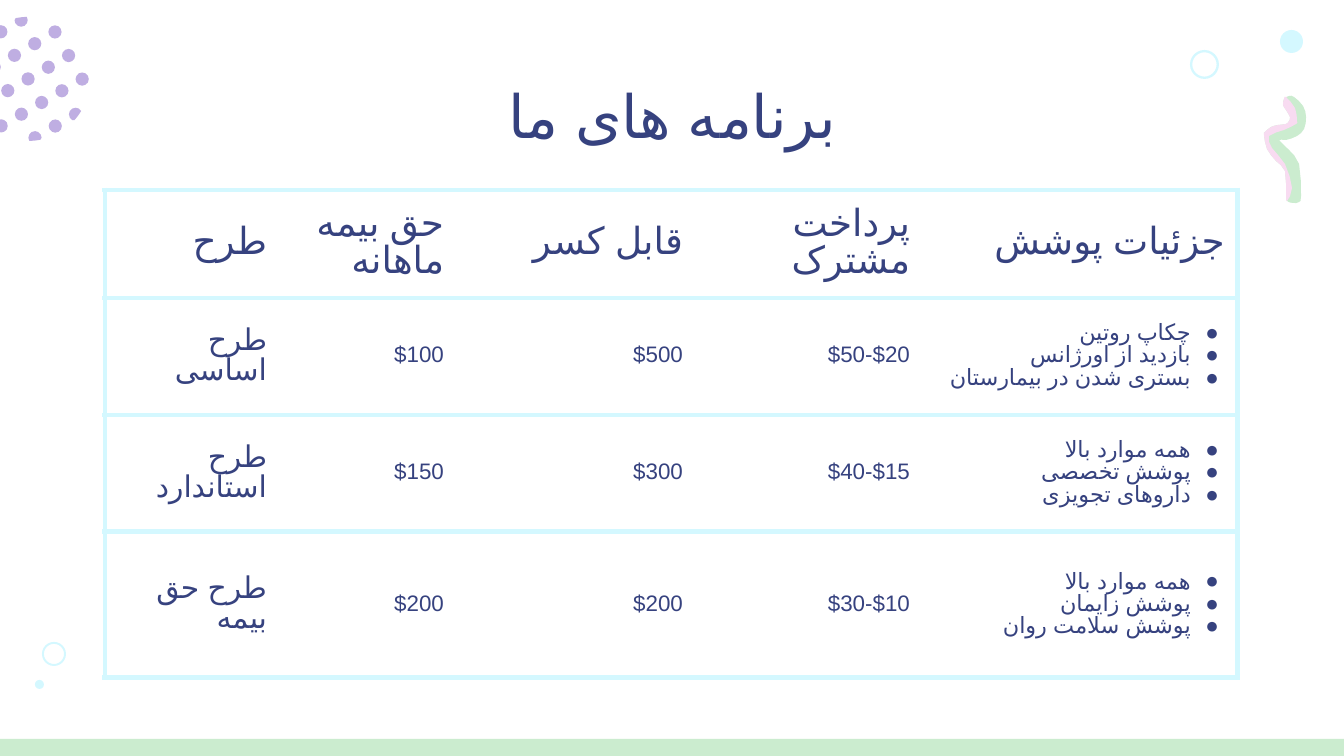
import math

from pptx import Presentation
from pptx.dml.color import RGBColor
from pptx.enum.lang import MSO_LANGUAGE_ID
from pptx.enum.shapes import MSO_SHAPE
from pptx.enum.text import MSO_ANCHOR, MSO_AUTO_SIZE, PP_ALIGN
from pptx.oxml.ns import qn
from pptx.oxml.xmlchemy import OxmlElement
from pptx.util import Emu, Pt

RECTANGLE, ELLIPSE, RING = MSO_SHAPE.RECTANGLE, MSO_SHAPE.OVAL, MSO_SHAPE.DONUT
TOP, MIDDLE = MSO_ANCHOR.TOP, MSO_ANCHOR.MIDDLE
CENTER, RIGHT = PP_ALIGN.CENTER, PP_ALIGN.RIGHT
FIXED = MSO_AUTO_SIZE.NONE
PERSIAN = MSO_LANGUAGE_ID.FARSI

SCALE = 914400 / 134.4
NAVY, AQUA, GREEN, PINK, LILAC = "36427F", "D4F8FF", "CBECCF", "F8DBF1", "BFAEE2"
INSET = 13

HEADERS = ["طرح", "حق بیمه ماهانه", "قابل کسر", "پرداخت مشترک", "جزئیات پوشش"]
PLANS = [
    ["طرح اساسی", "$100", "$500", "$20-$50",
     "چکاپ روتین\nبازدید از اورژانس\nبستری شدن در بیمارستان"],
    ["طرح استاندارد", "$150", "$300", "$15-$40",
     "همه موارد بالا\nپوشش تخصصی\nداروهای تجویزی"],
    ["طرح حق بیمه", "$200", "$200", "$10-$30",
     "همه موارد بالا\nپوشش زایمان\nپوشش سلامت روان"],
]
COLUMN_WIDTHS = [175, 177, 239, 227, 315]
ROW_HEIGHTS = [108, 117, 117, 146]

RIBBON_LEFT_EDGE = [
    (1284, 99), (1283, 105), (1286, 110), (1290, 117), (1289, 121), (1286, 124),
    (1278, 125), (1271, 127), (1265, 132), (1264, 135), (1267, 149), (1276, 161),
    (1285, 171), (1286, 195), (1287, 201)]
RIBBON_RIGHT_EDGE = [
    (1293, 203), (1299, 202), (1301, 196), (1299, 164), (1288, 149), (1279, 140),
    (1286, 140), (1297, 136), (1304, 129), (1306, 117), (1303, 106), (1294, 97),
    (1289, 96)]
RIBBON_SHADE_EDGE = [
    (1292, 188), (1285, 164), (1272, 148), (1269, 136), (1284, 130), (1296, 124),
    (1297, 121), (1295, 108), (1286, 97)]


def px(length):
    return Emu(round(length * SCALE))


def colour(hex_string):
    return RGBColor.from_string(hex_string)


def paint(shape, fill):
    shape.shadow.inherit = False
    shape.fill.solid()
    shape.fill.fore_color.rgb = colour(fill)
    shape.line.fill.background()


def add_preset(slide, kind, left, top, width, height, fill):
    shape = slide.shapes.add_shape(kind, px(left), px(top), px(width), px(height))
    paint(shape, fill)
    return shape


def add_ring(slide, left, top, size):
    ring = add_preset(slide, RING, left, top, size, size, AQUA)
    ring.adjustments[0] = 0.08


def turn(point, degrees):
    x, y = point
    cos, sin = math.cos(math.radians(degrees)), math.sin(math.radians(degrees))
    return x * cos - y * sin, x * sin + y * cos


def add_outline(slide, contours, fill, rotation):
    level = [[tuple(map(px, turn(point, -rotation))) for point in contour]
             for contour in contours]
    builder = slide.shapes.build_freeform(*level[0][0], scale=1.0)
    for index, contour in enumerate(level):
        if index:
            builder.move_to(*contour[0])
        builder.add_line_segments(contour[1:], close=True)
    shape = builder.convert_to_shape()
    center = shape.left + shape.width / 2, shape.top + shape.height / 2
    x, y = turn(center, rotation)
    shape.left = Emu(round(x - shape.width / 2))
    shape.top = Emu(round(y - shape.height / 2))
    shape.rotation = rotation
    paint(shape, fill)


def smooth_curve(points):
    count = len(points)
    curve = []
    for i in range(count):
        a, b, c, d = (points[(i + k) % count] for k in (-1, 0, 1, 2))
        midpoint = tuple((9 * (q + r) - p - s) / 16 for p, q, r, s in zip(a, b, c, d))
        curve += [b, midpoint]
    return curve


def add_dot_cluster(slide, center_x, center_y):
    radius, limit, rotation = 6.6, 62, 60
    dots = []
    for row in range(-2, 3):
        reach = 1 if abs(row) == 2 else 2
        for column in range(-reach, reach + 1):
            dot = []
            for angle in range(0, 360, 30):
                x = column * 27.2 + radius * math.cos(math.radians(angle))
                y = row * 23.4 + radius * math.sin(math.radians(angle))
                shrink = min(1, limit / math.hypot(x, y))
                x, y = turn((x * shrink, y * shrink), rotation)
                dot.append((center_x + x, center_y + y))
            dots.append(dot)
    add_outline(slide, dots, LILAC, rotation)


def style_run(run, font, size):
    run.font.name = font
    run.font.size = Pt(size)
    run.font.color.rgb = colour(NAVY)
    run.font.language_id = PERSIAN
    script_font = OxmlElement("a:cs")
    script_font.set("typeface", "Arial")
    run._r.find(qn("a:rPr")).append(script_font)


def add_bullet(paragraph):
    properties = paragraph._p.get_or_add_pPr()
    properties.set("marL", str(px(34)))
    properties.set("indent", str(px(-28)))
    bullet_colour = OxmlElement("a:buClr")
    value = OxmlElement("a:srgbClr")
    value.set("val", NAVY)
    bullet_colour.append(value)
    bullet_font = OxmlElement("a:buFont")
    bullet_font.set("typeface", "Arial")
    bullet = OxmlElement("a:buChar")
    bullet.set("char", "●")
    properties.extend([bullet_colour, bullet_font, bullet])


def set_borders(cell, sides):
    properties = cell._tc.get_or_add_tcPr()
    for index, side in enumerate("LRTB"):
        line = OxmlElement(f"a:ln{side}")
        if side in sides:
            line.set("w", str(Pt(3)))
            fill = OxmlElement("a:solidFill")
            value = OxmlElement("a:srgbClr")
            value.set("val", AQUA)
            fill.append(value)
        else:
            fill = OxmlElement("a:noFill")
        line.append(fill)
        properties.insert(index, line)


def fill_cell(cell, text, font, size, bulleted):
    cell.fill.background()
    cell.vertical_anchor = MIDDLE
    cell.margin_left = cell.margin_right = px(INSET)
    cell.margin_top = cell.margin_bottom = px(INSET)
    cell.text_frame.text = text
    for paragraph in cell.text_frame.paragraphs:
        paragraph.alignment = RIGHT
        paragraph.line_spacing = Pt(size)
        paragraph._p.get_or_add_pPr().set("rtl", "1")
        if bulleted:
            add_bullet(paragraph)
        for run in paragraph.runs:
            style_run(run, font, size)


def add_plan_table(slide, left, top):
    rows = [HEADERS] + PLANS
    last = len(HEADERS) - 1
    table = slide.shapes.add_table(
        len(rows), len(HEADERS), px(left), px(top),
        px(sum(COLUMN_WIDTHS)), px(sum(ROW_HEIGHTS))).table
    table.first_row = table.horz_banding = False
    for column, width in zip(table.columns, COLUMN_WIDTHS):
        column.width = px(width)
    for row, height in zip(table.rows, ROW_HEIGHTS):
        row.height = px(height)
    for r, texts in enumerate(rows):
        for c, text in enumerate(texts):
            if r == 0:
                font, size = "Arial", 20
            elif c == 0:
                font, size = "Arial", 16
            else:
                font, size = "Manrope", 12
            cell = table.cell(r, c)
            fill_cell(cell, text, font, size, r > 0 and c == last)
            set_borders(cell, "TB" + {0: "L", last: "R"}.get(c, ""))


def set_title(slide, text):
    title = slide.shapes.title
    title.left, title.top, title.width, title.height = map(px, (106, 66, 1133, 85))
    frame = title.text_frame
    frame.text = text
    frame.word_wrap = True
    frame.auto_size = FIXED
    frame.vertical_anchor = TOP
    frame.margin_left = frame.margin_right = px(INSET)
    frame.margin_top = frame.margin_bottom = px(INSET)
    paragraph = frame.paragraphs[0]
    paragraph.alignment = CENTER
    style_run(paragraph.runs[0], "Arial", 32)


def main():
    deck = Presentation()
    deck.slide_width, deck.slide_height = px(1344), px(756)
    slide = deck.slides.add_slide(deck.slide_layouts[5])
    add_dot_cluster(slide, 28, 79)
    for edge, fill in ((RIBBON_RIGHT_EDGE, GREEN), (RIBBON_SHADE_EDGE, PINK)):
        add_outline(slide, [smooth_curve(RIBBON_LEFT_EDGE + edge)], fill, 118)
    add_preset(slide, RECTANGLE, 0, 739, 1344, 17, GREEN)
    add_ring(slide, 1190, 50, 29)
    add_ring(slide, 42, 642, 24)
    add_preset(slide, ELLIPSE, 35, 680, 9, 9, AQUA)
    add_preset(slide, ELLIPSE, 1280, 30, 23, 23, AQUA)
    set_title(slide, "برنامه های ما")
    add_plan_table(slide, 105, 190)
    deck.save("out.pptx")


if __name__ == "__main__":
    main()
